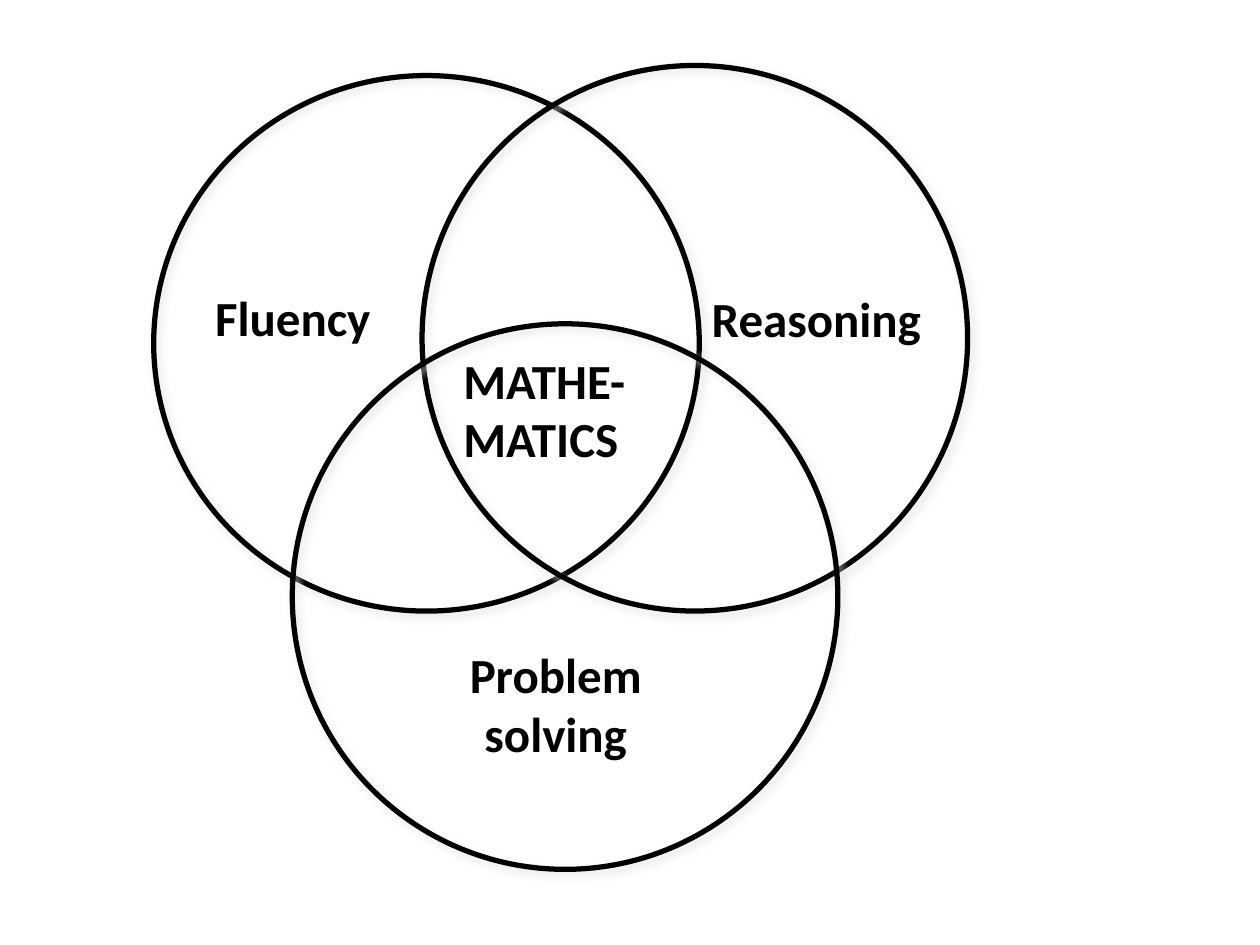
from lxml import etree
from pptx import Presentation
from pptx.dml.color import RGBColor
from pptx.enum import shapes, text
from pptx.oxml import ns
from pptx.util import Inches, Pt

THEME = {
    "font": "Calibri",
    "size": 28,
    "ink": "000000",
    "line": 3,
    "shadow": {"color": "DCDEE0", "opacity": 75, "blur": 5, "distance": 3, "angle": 45},
}

# Content: left, top, width, height in inches
CIRCLES = [
    (1.22, 0.6, 4.33, 4.25),
    (3.35, 0.52, 4.33, 4.33),
    (2.32, 2.57, 4.33, 4.33),
]
LABELS = [
    (["Fluency"], (1.61, 2.23, 2.2, 0.57), text.PP_ALIGN.LEFT),
    (["Reasoning"], (5.55, 2.24, 2.52, 0.57), text.PP_ALIGN.LEFT),
    (["Problem", "solving"], (3.27, 5.07, 2.28, 1.04), text.PP_ALIGN.CENTER),
    (["MATHE-", "MATICS"], (3.58, 2.73, 2.2, 1.04), text.PP_ALIGN.LEFT),
]


def add_shadow(shape, color, opacity, blur, distance, angle):
    shape.shadow.inherit = False
    effects = shape.element.spPr.find(ns.qn("a:effectLst"))
    outer = etree.SubElement(
        effects, ns.qn("a:outerShdw"), blurRad=str(Pt(blur)), dist=str(Pt(distance)),
        dir=str(angle * 60000), algn="tl", rotWithShape="0")
    tint = etree.SubElement(outer, ns.qn("a:srgbClr"), val=color)
    etree.SubElement(tint, ns.qn("a:alpha"), val=str(opacity * 1000))


def add_circle(page, place):
    circle = page.shapes.add_shape(shapes.MSO_SHAPE.OVAL, *map(Inches, place))
    circle.fill.background()
    circle.line.color.rgb = RGBColor.from_string(THEME["ink"])
    circle.line.width = Pt(THEME["line"])
    add_shadow(circle, **THEME["shadow"])


def add_label(page, lines, place, align=text.PP_ALIGN.LEFT, bold=True):
    box = page.shapes.add_textbox(*map(Inches, place))
    frame = box.text_frame
    frame.word_wrap = True
    frame.auto_size = text.MSO_AUTO_SIZE.SHAPE_TO_FIT_TEXT
    frame.text = "\n".join(lines)
    for para in frame.paragraphs:
        para.alignment = align
        for span in para.runs:
            span.font.name = THEME["font"]
            span.font.size = Pt(THEME["size"])
            span.font.bold = bold
            span.font.color.rgb = RGBColor.from_string(THEME["ink"])


def main():
    deck = Presentation()
    deck.slide_width, deck.slide_height = Inches(10), Inches(7.5)
    page = deck.slides.add_slide(deck.slide_layouts[6])

    # Overlapping circles
    for place in CIRCLES:
        add_circle(page, place)

    # Labels on top
    for lines, place, align in LABELS:
        add_label(page, lines, place, align=align)

    deck.save("out.pptx")


if __name__ == "__main__":
    main()
